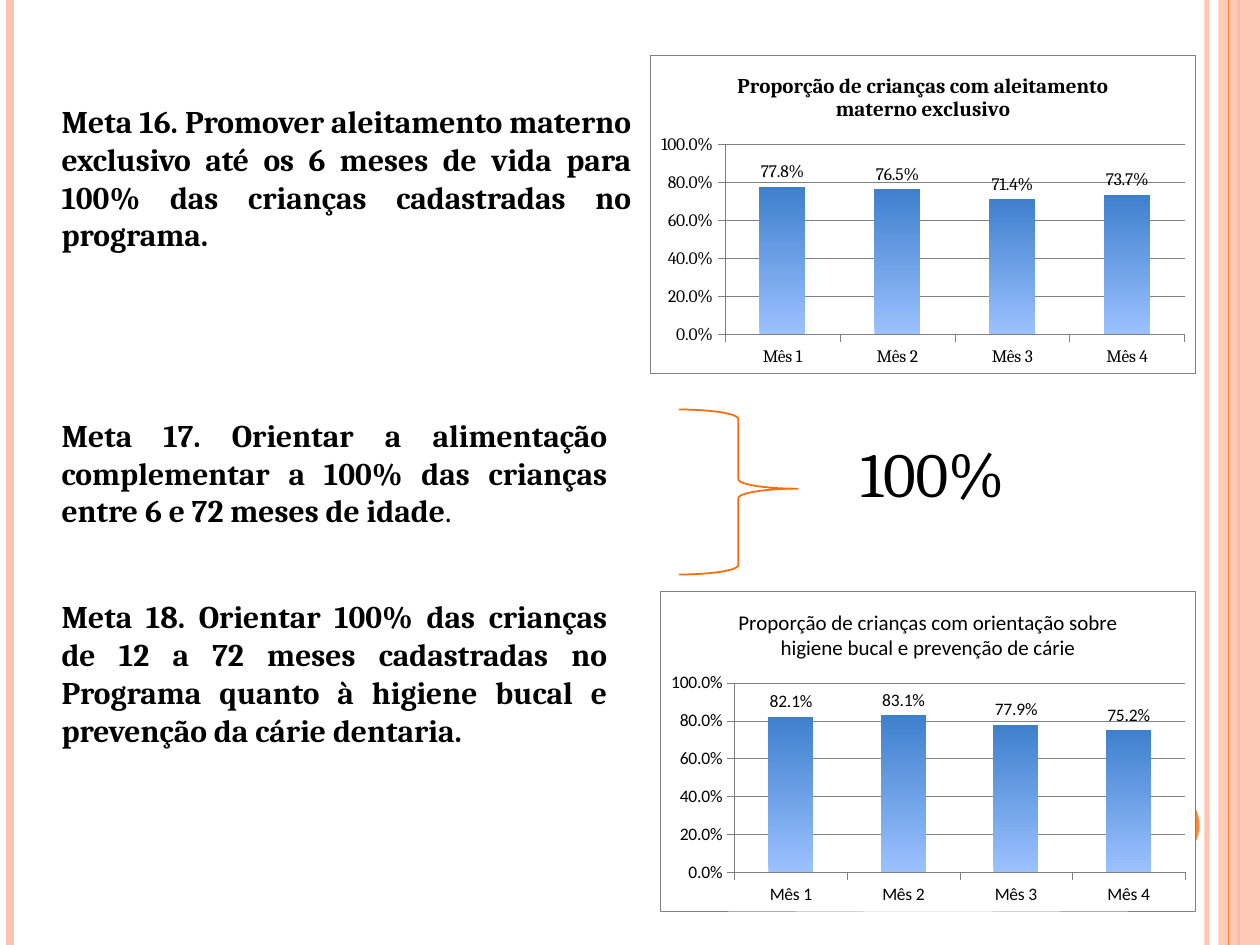
from lxml import etree
from pptx import Presentation
from pptx import util as u
from pptx.chart.data import CategoryChartData
from pptx.dml.color import RGBColor
from pptx.enum import chart as ch, shapes, text
from pptx.oxml import ns, parse_xml

WIDTH, HEIGHT = 10, 7.5
COLORS = {"white": "FFFFFF", "black": "000000", "peach": "FEC3AE", "orange": "FE8637",
          "brace": "FF6B0A", "grid": "808080", "bar_light": "9BC1FF", "bar_dark": "3F80CD"}
LEFT, CHART_RIGHT = 0.39, 9.49
ROW_TOPS = {"meta16": 0.76, "meta17": 3.25, "meta18": 4.69}

RULES = [(9.58, 3, "peach", 93), (0.08, 4.5, "peach", 100), (9.83, 1.5, "orange", 100)]
INNER_RULE = (9.75, 0.75, "orange", 100)

GOALS = [
    (ROW_TOPS["meta16"], 4.72, 1.31,
     [("Meta 16. Promover aleitamento materno exclusivo até os 6 meses de vida "
       "para 100% das crianças cadastradas no programa.", True)]),
    (ROW_TOPS["meta17"], 4.53, 1.01,
     [("Meta 17. Orientar a alimentação complementar a 100% das crianças "
       "entre 6 e 72 meses de idade", True), (".", False)]),
    (ROW_TOPS["meta18"], 4.53, 1.31,
     [("Meta 18. Orientar 100% das crianças de 12 a 72 meses cadastradas no Programa "
       "quanto à higiene bucal e prevenção da cárie dentaria.", True)]),
]
MONTHS = [f"Mês {month}" for month in range(1, 5)]
BREASTFEEDING = {
    "title": "Proporção de crianças com aleitamento materno exclusivo",
    "values": [0.778, 0.765, 0.714, 0.737],
    "font": "Cambria", "bold": True, "top": 0.44, "width": 4.33, "height": 2.52}
ORAL_HEALTH = {
    "title": "Proporção de crianças com orientação sobre higiene bucal e prevenção de cárie",
    "values": [0.821, 0.831, 0.779, 0.752],
    "font": "Calibri", "bold": False, "top": ROW_TOPS["meta18"], "width": 4.25, "height": 2.54}


def rgb(name):
    return RGBColor.from_string(COLORS[name])


def inches(*lengths):
    return [u.Inches(length) for length in lengths]


def set_alpha(part, percent):
    for color in part.iter(ns.qn("a:srgbClr")):
        etree.SubElement(color, ns.qn("a:alpha")).set("val", str(percent * 1000))


def format_font(font, name="Cambria", size=18, bold=False, color="black"):
    font.name, font.size, font.bold = name, u.Pt(size), bold
    font.color.rgb = rgb(color)


def add_text(slide, runs, box, align=None, wrap=True, **style):
    frame = slide.shapes.add_textbox(*inches(*box)).text_frame
    frame.word_wrap = wrap
    frame.auto_size = text.MSO_AUTO_SIZE.SHAPE_TO_FIT_TEXT
    paragraph = frame.paragraphs[0]
    paragraph.alignment = align
    for words, bold in runs:
        run = paragraph.add_run()
        run.text = words
        format_font(run.font, bold=bold, **style)


def add_rule(slide, x, width, color, alpha):
    rule = slide.shapes.add_connector(
        shapes.MSO_CONNECTOR.STRAIGHT, *inches(x, 0, x, HEIGHT))
    rule.line.color.rgb = rgb(color)
    rule.line.width = u.Pt(width)
    properties = rule._element.spPr
    if alpha < 100:
        set_alpha(properties, alpha)
    etree.SubElement(properties, ns.qn("a:effectLst"))


def add_solid(slide, kind, box, color, alpha=100):
    solid = slide.shapes.add_shape(kind, *inches(*box))
    solid.shadow.inherit = False
    solid.fill.solid()
    solid.fill.fore_color.rgb = rgb(color)
    solid.line.fill.background()
    if alpha < 100:
        set_alpha(solid._element.spPr, alpha)


def panel_properties(border):
    line = (f'<a:ln w="3175"><a:solidFill><a:srgbClr val="{COLORS["grid"]}"/></a:solidFill></a:ln>'
            if border else '<a:ln><a:noFill/></a:ln>')
    return parse_xml(
        f'<c:spPr {ns.nsdecls("c", "a")}><a:solidFill><a:srgbClr val="{COLORS["white"]}"/>'
        f'</a:solidFill>{line}</c:spPr>')


def thin_line(line):
    line.color.rgb = rgb("grid")
    line.width = u.Pt(0.25)


def add_indicator(slide, indicator):
    data = CategoryChartData(number_format="0.0%")
    data.categories = MONTHS
    data.add_series(indicator["title"], indicator["values"])
    width = indicator["width"]
    box = inches(CHART_RIGHT - width, indicator["top"], width, indicator["height"])
    chart = slide.shapes.add_chart(ch.XL_CHART_TYPE.COLUMN_CLUSTERED, *box, data).chart
    format_font(chart.font, indicator["font"], 10)
    chart.has_legend = False

    chart.has_title = True
    title = chart.chart_title
    title.include_in_layout = False
    heading = title.text_frame.paragraphs[0].add_run()
    heading.text = indicator["title"]
    format_font(heading.font, indicator["font"], 12, indicator["bold"])

    for axis in (chart.category_axis, chart.value_axis):
        axis.major_tick_mark = ch.XL_TICK_MARK.OUTSIDE
        axis.minor_tick_mark = ch.XL_TICK_MARK.NONE
        format_font(axis.tick_labels.font, indicator["font"], 10)
        thin_line(axis.format.line)
    scale = chart.value_axis
    scale.minimum_scale, scale.maximum_scale, scale.major_unit = 0, 1, 0.2
    scale.has_major_gridlines = True
    thin_line(scale.major_gridlines.format.line)
    scale.tick_labels.number_format = "0.0%"
    scale.tick_labels.number_format_is_linked = False

    plot = chart.plots[0]
    plot.gap_width = 150
    plot.vary_by_categories = False
    plot.has_data_labels = True
    labels = plot.data_labels
    labels.show_value = True
    labels.number_format = "0.0%"
    labels.number_format_is_linked = False
    labels.position = ch.XL_LABEL_POSITION.OUTSIDE_END
    format_font(labels.font, indicator["font"], 10)

    bars = plot.series[0].format.fill
    bars.gradient()
    bars.gradient_angle = 90
    for stop, position, color in zip(bars.gradient_stops, (0, 1), ("bar_light", "bar_dark")):
        stop.position = position
        stop.color.rgb = rgb(color)

    chart_part = chart._chartSpace.find(ns.qn("c:chart"))
    chart_part.addnext(panel_properties(border=True))
    chart_part.find(ns.qn("c:plotArea")).append(panel_properties(border=False))


def add_brace(slide):
    brace = slide.shapes.add_shape(
        shapes.MSO_SHAPE.RIGHT_BRACE, *inches(5.39, ROW_TOPS["meta17"], 0.94, 1.31))
    brace.shadow.inherit = False
    brace.adjustments[0], brace.adjustments[1] = 0.08, 0.48
    brace.fill.background()
    brace.line.color.rgb = rgb("brace")
    brace.line.width = u.Pt(1)


def main():
    deck = Presentation()
    deck.slide_width, deck.slide_height = inches(WIDTH, HEIGHT)
    slide = deck.slides.add_slide(deck.slide_layouts[6])
    for rule in RULES:
        add_rule(slide, *rule)
    add_solid(slide, shapes.MSO_SHAPE.RECTANGLE, (9.67, 0, 0.33, HEIGHT), "peach", 87)
    add_rule(slide, *INNER_RULE)
    add_solid(slide, shapes.MSO_SHAPE.OVAL, (8.92, 6.25, 0.6, 0.6), "orange")
    add_indicator(slide, BREASTFEEDING)
    for top, width, height, runs in GOALS:
        add_text(slide, runs, (LEFT, top, width, height), align=text.PP_ALIGN.JUSTIFY)
    add_indicator(slide, ORAL_HEALTH)
    add_brace(slide)
    add_text(slide, [("100%", False)], (6.73, 3.4, 1.49, 0.71), wrap=False, size=36)
    deck.save("out.pptx")


if __name__ == "__main__":
    main()
